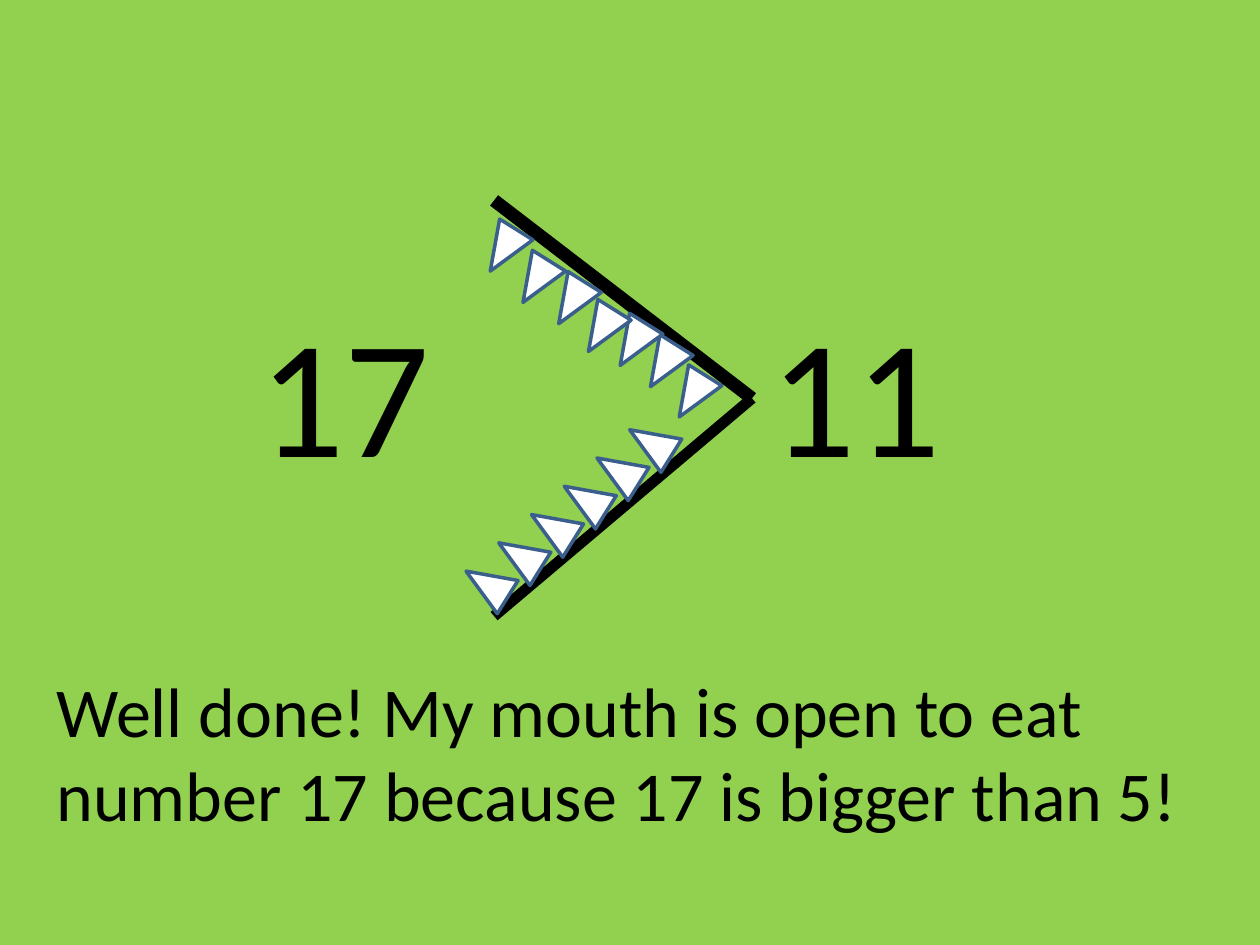
"""Build a greater-than slide whose sign is a toothed open mouth."""
from dataclasses import dataclass

from lxml import etree
from pptx import Presentation
from pptx.dml.color import RGBColor
from pptx.enum.shapes import MSO_CONNECTOR, MSO_SHAPE
from pptx.oxml.ns import qn
from pptx.shapes.group import GroupShape
from pptx.slide import Slide
from pptx.util import Cm, Pt

TRIANGLE = MSO_SHAPE.ISOSCELES_TRIANGLE
STRAIGHT = MSO_CONNECTOR.STRAIGHT


@dataclass(frozen=True)
class Theme:
    background: RGBColor = RGBColor(0x92, 0xD0, 0x50)
    ink: RGBColor = RGBColor(0, 0, 0)
    tooth: RGBColor = RGBColor(0xFF, 0xFF, 0xFF)
    tooth_edge: RGBColor = RGBColor(0x3A, 0x5F, 0x8C)
    font: str = "Calibri"
    number_size: float = 96
    message_size: float = 40
    tooth_line: float = 2


@dataclass(frozen=True)
class Jaw:
    start: tuple[float, float]
    end: tuple[float, float]
    weight: float
    rotation: float
    teeth: tuple[tuple[float, float], ...]


@dataclass(frozen=True)
class Caption:
    text: str
    left: float
    top: float
    width: float
    height: float
    size: float
    inset: float = 0.25
    tab: float | None = None


THEME = Theme()
HINGE = (15.16, 8.03)
TOOTH_SIZE = (0.79, 0.99)
LOWER_TEETH = tuple((9.42 + 0.66 * i, 11.28 - 0.57 * i) for i in range(6))
UPPER_TEETH = ((13.56, 7.49), (12.98, 6.88), (12.37, 6.45), (11.73, 6.17),
               (11.13, 5.61), (10.41, 5.18), (9.75, 4.55))
JAWS = (
    Jaw((9.96, 12.42), HINGE, 6.25, 302, LOWER_TEETH),
    Jaw(HINGE, (9.96, 4.04), 7.5, 212, UPPER_TEETH),
)
NUMBERS = Caption("17\t11", 2.11, 5.72, 19.99, 4.37, THEME.number_size, 3.12, 10.31)
MESSAGE = Caption(
    "Well done! My mouth is open to eat number 17 because 17 is bigger than 5!",
    0.89, 13.34, 23.34, 3.68, THEME.message_size)


def add_caption(s: Slide, caption: Caption) -> None:
    sp = s.shapes.add_textbox(Cm(caption.left), Cm(caption.top),
                              Cm(caption.width), Cm(caption.height))
    tf = sp.text_frame
    tf.word_wrap = True
    tf.margin_left = Cm(caption.inset)
    p = tf.paragraphs[0]
    p.text = caption.text
    if caption.tab is not None:
        tabs = etree.SubElement(p._p.get_or_add_pPr(), qn("a:tabLst"))
        etree.SubElement(tabs, qn("a:tab"), pos=str(Cm(caption.tab)), algn="l")
    for r in p.runs:
        r.font.name = THEME.font
        r.font.size = Pt(caption.size)
        r.font.color.rgb = THEME.ink


def add_gum(mouth: GroupShape, jaw: Jaw) -> None:
    (x1, y1), (x2, y2) = jaw.start, jaw.end
    line = mouth.shapes.add_connector(STRAIGHT, Cm(x1), Cm(y1), Cm(x2), Cm(y2))
    line.line.color.rgb = THEME.ink
    line.line.width = Pt(jaw.weight)
    etree.SubElement(line._element.spPr, qn("a:effectLst"))


def add_tooth(mouth: GroupShape, left: float, top: float, rotation: float) -> None:
    width, height = TOOTH_SIZE
    sp = mouth.shapes.add_shape(TRIANGLE, Cm(left), Cm(top), Cm(width), Cm(height))
    sp.rotation = rotation
    sp.shadow.inherit = False
    sp.fill.solid()
    sp.fill.fore_color.rgb = THEME.tooth
    sp.line.color.rgb = THEME.tooth_edge
    sp.line.width = Pt(THEME.tooth_line)


def add_mouth(s: Slide) -> None:
    mouth = s.shapes.add_group_shape()
    for jaw in JAWS:
        add_gum(mouth, jaw)
    for jaw in JAWS:
        for left, top in jaw.teeth:
            add_tooth(mouth, left, top, jaw.rotation)


def main() -> None:
    prs = Presentation()
    prs.slide_width, prs.slide_height = Cm(25.4), Cm(19.05)
    s = prs.slides.add_slide(prs.slide_layouts[6])
    s.background.fill.solid()
    s.background.fill.fore_color.rgb = THEME.background
    add_caption(s, NUMBERS)
    add_mouth(s)
    add_caption(s, MESSAGE)
    prs.save("out.pptx")


if __name__ == "__main__":
    main()
